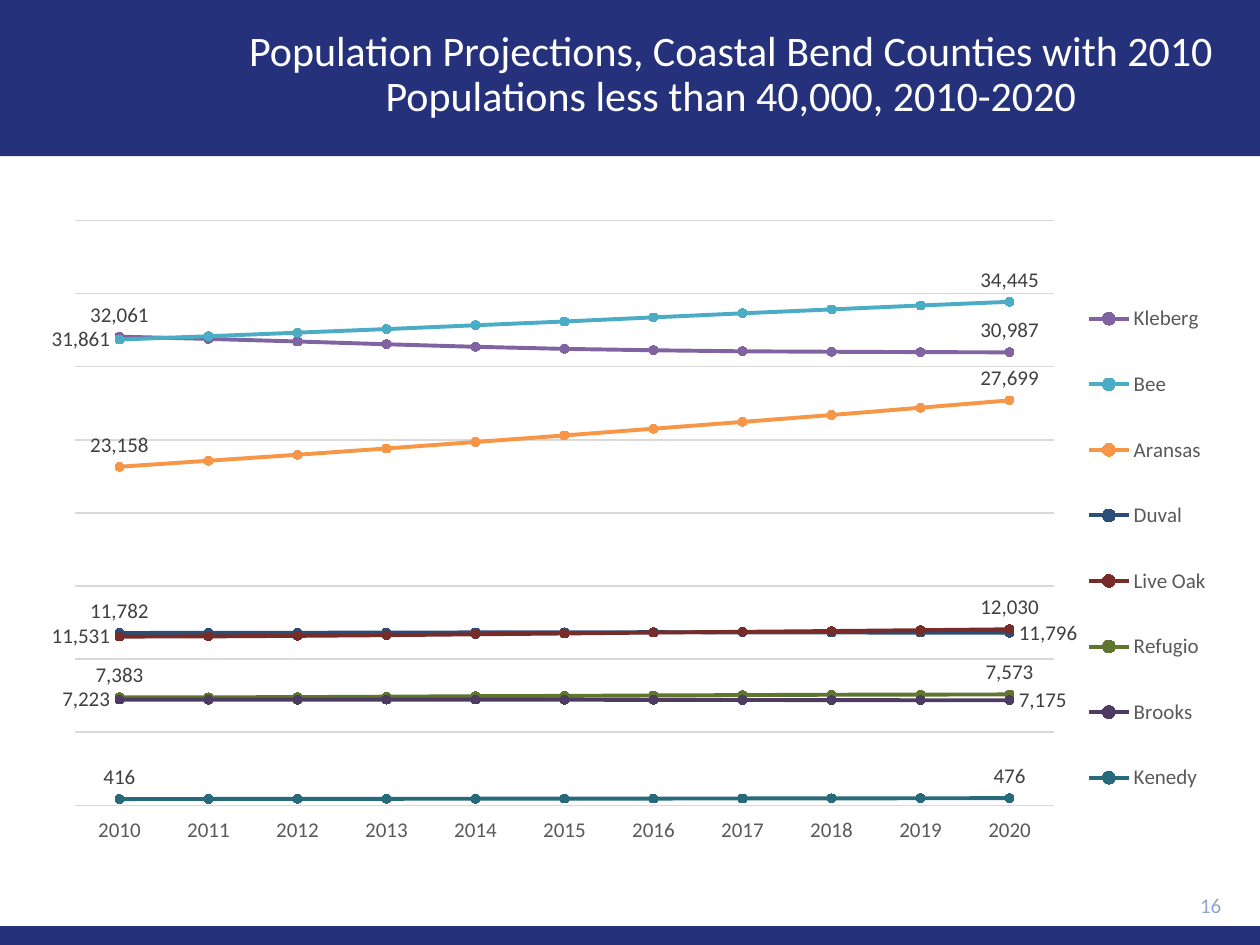
from pptx import Presentation
from pptx.chart.data import CategoryChartData as Data
from pptx.dml.color import RGBColor
from pptx.enum.chart import XL_CHART_TYPE as Kind, XL_LABEL_POSITION as Pos
from pptx.enum.chart import XL_LEGEND_POSITION as Side, XL_MARKER_STYLE as Mark
from pptx.enum.chart import XL_TICK_LABEL_POSITION as Tick, XL_TICK_MARK as Notch
from pptx.enum.shapes import MSO_SHAPE as Shape
from pptx.enum.text import MSO_ANCHOR as Anchor, PP_ALIGN as Align
from pptx.oxml import parse_xml
from pptx.oxml.ns import nsdecls, qn
from pptx.util import Cm, Pt

YEARS = [str(year) for year in range(2010, 2021)]
ROWS = [
    ("Kleberg", "8064A2", Pos.ABOVE, Pos.ABOVE,
     [32061, 31906, 31731, 31539, 31366, 31225, 31129, 31057, 31028, 31002, 30987]),
    ("Bee", "4BACC6", Pos.LEFT, Pos.ABOVE,
     [31861, 32089, 32335, 32579, 32839, 33099, 33379, 33657, 33924, 34195, 34445]),
    ("Aransas", "F79646", Pos.ABOVE, Pos.ABOVE,
     [23158, 23568, 23981, 24407, 24851, 25302, 25763, 26228, 26700, 27198, 27699]),
    ("Duval", "2C4D75", Pos.ABOVE, Pos.RIGHT,
     [11782, 11783, 11794, 11809, 11819, 11824, 11836, 11822, 11814, 11803, 11796]),
    ("Live Oak", "772C2A", Pos.LEFT, Pos.ABOVE,
     [11531, 11546, 11583, 11632, 11688, 11748, 11812, 11859, 11912, 11970, 12030]),
    ("Refugio", "5F7530", Pos.ABOVE, Pos.ABOVE,
     [7383, 7378, 7390, 7421, 7454, 7475, 7505, 7529, 7554, 7563, 7573]),
    ("Brooks", "4D3B62", Pos.LEFT, Pos.RIGHT,
     [7223, 7214, 7215, 7219, 7221, 7213, 7203, 7195, 7187, 7178, 7175]),
    ("Kenedy", "276A7C", Pos.ABOVE, Pos.ABOVE,
     [416, 422, 428, 434, 439, 445, 451, 458, 464, 470, 476]),
]


def color(code):
    return RGBColor.from_string(code)


def place(node, index, target, x, y, w, h):
    for old in node.findall(qn("c:layout")):
        node.remove(old)
    inner = '<c:layoutTarget val="inner"/>' if target else ""
    modes = '<c:xMode val="edge"/><c:yMode val="edge"/>'
    sizes = "".join(f'<c:{key} val="{val}"/>' for key, val in zip("xywh", (x, y, w, h)))
    node.insert(index, parse_xml(
        f'<c:layout {nsdecls("c")}><c:manualLayout>{inner}{modes}{sizes}'
        '</c:manualLayout></c:layout>'))


class Deck:
    face = "Calibri"
    navy = "25327B"
    gray = "595959"
    rule = "D9D9D9"

    def __init__(self):
        self.show = Presentation()
        self.show.slide_width = Cm(25.4)
        self.show.slide_height = Cm(19.05)
        self.slide = self.show.slides.add_slide(self.show.slide_layouts[5])
        self.shapes = self.slide.shapes

    def style(self, font, size, code):
        font.name = self.face
        font.size = Pt(size)
        font.color.rgb = color(code)

    def band(self, top, height):
        box = self.shapes.add_shape(Shape.RECTANGLE, 0, Cm(top), Cm(25.4), Cm(height))
        box.shadow.inherit = False
        box.fill.solid()
        box.fill.fore_color.rgb = color(self.navy)
        box.line.fill.background()

    def text(self, box, words, size, code, align):
        frame = box.text_frame
        frame.word_wrap = True
        frame.vertical_anchor = Anchor.MIDDLE
        frame.text = words
        para = frame.paragraphs[0]
        para.alignment = align
        self.style(para.font, size, code)
        return para

    def title(self, words, x, y, w, h):
        box = self.shapes.title
        box.left, box.top, box.width, box.height = Cm(x), Cm(y), Cm(w), Cm(h)
        para = self.text(box, words, 24, "FFFFFF", Align.CENTER)
        para.line_spacing = 0.9
        self.shapes.element.append(box.element)

    def number(self, words, x, y, w, h):
        box = self.shapes.add_textbox(Cm(x), Cm(y), Cm(w), Cm(h))
        self.text(box, words, 12, "8FA5D1", Align.RIGHT)

    def chart(self, x, y, w, h):
        data = Data(number_format="#,##0")
        data.categories = YEARS
        for name, _, _, _, vals in ROWS:
            data.add_series(name, vals)
        chart = self.shapes.add_chart(
            Kind.LINE_MARKERS, Cm(x), Cm(y), Cm(w), Cm(h), data).chart
        self.style(chart.font, 12, "000000")
        chart.has_title = False
        plot = chart.plots[0]
        plot.vary_by_categories = False
        for line, (_, code, first, last, _) in zip(plot.series, ROWS):
            self.line(line, code, first, last)
        self.axes(chart)
        chart.has_legend = True
        chart.legend.position = Side.RIGHT
        chart.legend.include_in_layout = False
        self.style(chart.legend.font, 12, self.gray)
        root = chart.element
        place(root.find(".//" + qn("c:plotArea")), 0, True, 0.02, 0.02, 0.84, 0.91)
        place(root.find(".//" + qn("c:legend")), 1, False, 0.88, 0.09, 0.12, 0.88)

    def line(self, line, code, first, last):
        line.smooth = False
        line.format.line.color.rgb = color(code)
        line.format.line.width = Pt(2.25)
        line.marker.style = Mark.CIRCLE
        line.marker.size = 5
        look = line.marker.format
        look.fill.solid()
        look.fill.fore_color.rgb = color(code)
        look.line.color.rgb = color(code)
        labels = line.data_labels
        labels.show_value = False
        labels.number_format = "#,##0"
        labels.number_format_is_linked = False
        for index, pos in ((0, first), (len(YEARS) - 1, last)):
            label = line.points[index].data_label
            self.style(label.font, 12, "404040")
            label.position = pos

    def axes(self, chart):
        base = chart.category_axis
        base.major_tick_mark = base.minor_tick_mark = Notch.NONE
        base.tick_label_position = Tick.LOW
        self.style(base.tick_labels.font, 12, self.gray)
        side = chart.value_axis
        side.minimum_scale, side.maximum_scale, side.major_unit = 0, 40000, 5000
        side.has_major_gridlines = True
        side.visible = False
        for item in (base, side.major_gridlines):
            item.format.line.color.rgb = color(self.rule)
            item.format.line.width = Pt(0.75)


def main():
    deck = Deck()
    deck.band(0, 3.15)
    deck.band(18.67, 0.38)
    deck.title("Population Projections, Coastal Bend Counties with 2010 "
               "Populations less than 40,000, 2010-2020", 4.32, 0.25, 20.83, 2.54)
    deck.number("16", 22.61, 17.81, 2.26, 0.86)
    deck.chart(1.04, 4.19, 23.5, 12.95)
    deck.show.save("out.pptx")


if __name__ == "__main__":
    main()
